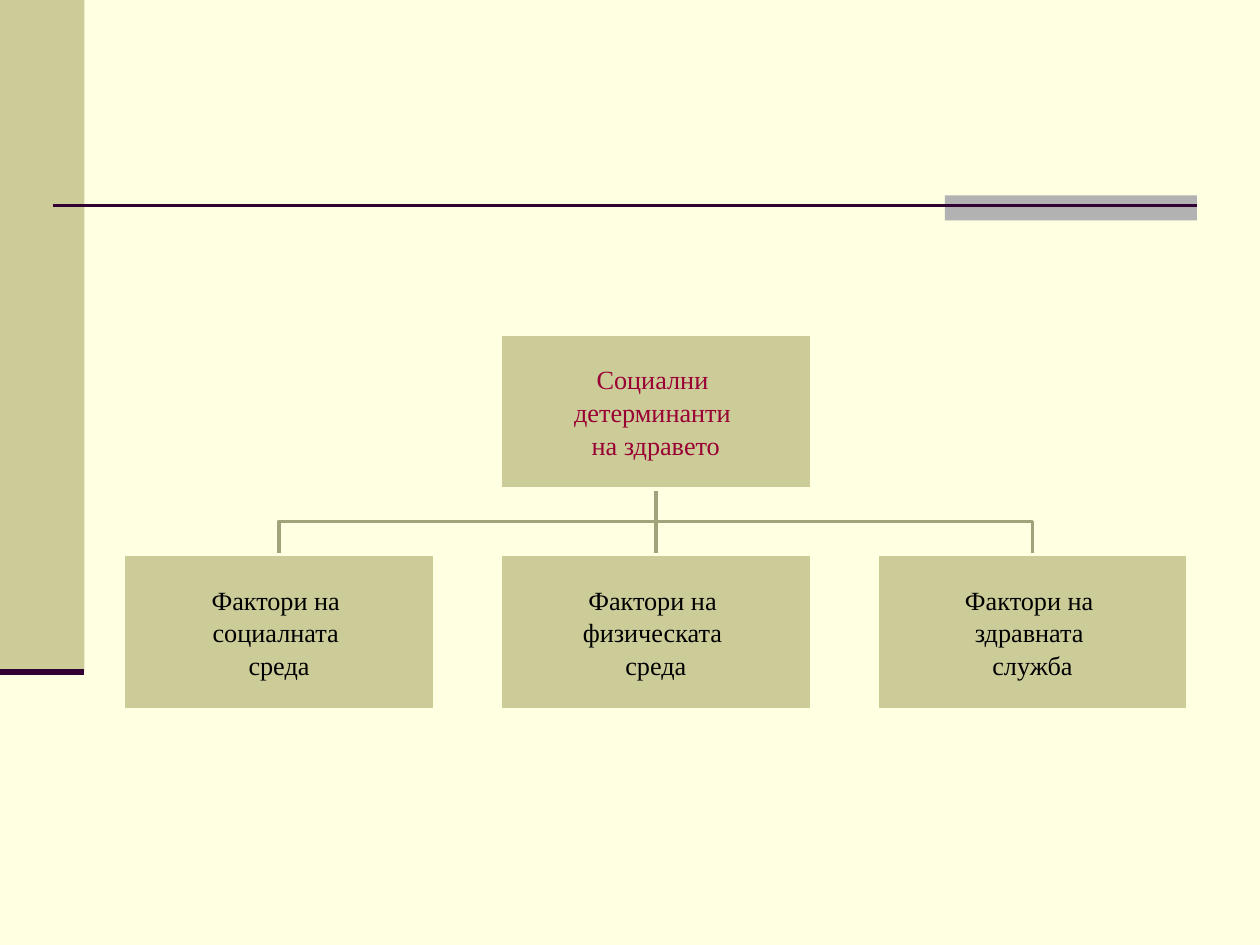
from pptx import Presentation
from pptx.dml.color import RGBColor
from pptx.enum.shapes import MSO_CONNECTOR, MSO_SHAPE
from pptx.enum.text import MSO_ANCHOR, PP_ALIGN
from pptx.oxml.ns import qn
from pptx.util import Inches, Pt
from lxml.etree import SubElement

THEME = {
    "bg": RGBColor.from_string("FFFFE1"),
    "box": RGBColor.from_string("CCCC99"),
    "accent": RGBColor.from_string("B2B2B2"),
    "rule": RGBColor.from_string("330033"),
    "branch": RGBColor.from_string("A3A37B"),
    "root_text": RGBColor.from_string("990033"),
    "text": RGBColor.from_string("000000"),
    "font": "Times New Roman",
    "size": Pt(15),
}

prs = Presentation()
prs.slide_width, prs.slide_height = Inches(10), Inches(7.5)
s = prs.slides.add_slide(prs.slide_layouts[6])
s.background.fill.solid()
s.background.fill.fore_color.rgb = THEME["bg"]


def add_rect(x, y, w, h, color):
    sp = s.shapes.add_shape(MSO_SHAPE.RECTANGLE, Inches(x), Inches(y), Inches(w), Inches(h))
    sp.shadow.inherit = False
    sp.fill.solid()
    sp.fill.fore_color.rgb = color
    sp.line.fill.background()
    return sp


def add_line(x1, y1, x2, y2, color, width):
    cx = s.shapes.add_connector(
        MSO_CONNECTOR.STRAIGHT, Inches(x1), Inches(y1), Inches(x2), Inches(y2))
    cx.line.color.rgb = color
    cx.line.width = Pt(width)
    SubElement(cx._element.spPr, qn("a:effectLst"))
    return cx


add_rect(0, 0, 0.67, 5.33, THEME["box"])
add_rect(7.5, 1.55, 2, 0.2, THEME["accent"])
add_line(0.42, 1.63, 9.5, 1.63, THEME["rule"], 1.5)
add_line(0, 5.33, 0.67, 5.33, THEME["rule"], 3.5)

box_w, box_h = 2.47, 1.23
cols = [0.98 + 2.99 * i for i in range(3)]
rows = [2.65, 4.4]
centers = [x + box_w / 2 for x in cols]
fork_top, fork_bottom = rows[0] + box_h, rows[1]
fork_mid = (fork_top + fork_bottom) / 2

for x in (centers[2], centers[0]):
    fb = s.shapes.build_freeform(Inches(centers[1]), Inches(fork_top))
    corners = [(centers[1], fork_mid), (x, fork_mid), (x, fork_bottom)]
    fb.add_line_segments([(Inches(a), Inches(b)) for a, b in corners], close=False)
    sp = fb.convert_to_shape()
    sp.shadow.inherit = False
    sp.fill.background()
    sp.line.color.rgb = THEME["branch"]
    sp.line.width = Pt(2)
stem = add_line(centers[1], fork_top, centers[1], fork_bottom, THEME["branch"], 2)

nodes = [
    (1, 0, "Социални \nдетерминанти \nна здравето", "root_text"),
    (0, 1, "Фактори на \nсоциалната \nсреда", "text"),
    (1, 1, "Фактори на \nфизическата \nсреда", "text"),
    (2, 1, "Фактори на \nздравната \nслужба", "text"),
]
boxes = {}
for col, row, text, color in nodes:
    sp = add_rect(cols[col], rows[row], box_w, box_h, THEME["box"])
    sp.line.color.rgb = THEME["bg"]
    sp.line.width = Pt(2)
    tf = sp.text_frame
    tf.text = text
    tf.word_wrap = True
    tf.vertical_anchor = MSO_ANCHOR.MIDDLE
    tf.margin_left = tf.margin_right = tf.margin_top = tf.margin_bottom = Inches(0.01)
    for p in tf.paragraphs:
        p.alignment = PP_ALIGN.CENTER
        p.line_spacing = 1.04
        for r in p.runs:
            r.font.name = THEME["font"]
            r.font.size = THEME["size"]
            r.font.color.rgb = THEME[color]
    boxes[col, row] = sp

stem.begin_connect(boxes[1, 0], 2)
stem.end_connect(boxes[1, 1], 0)

prs.save("out.pptx")
